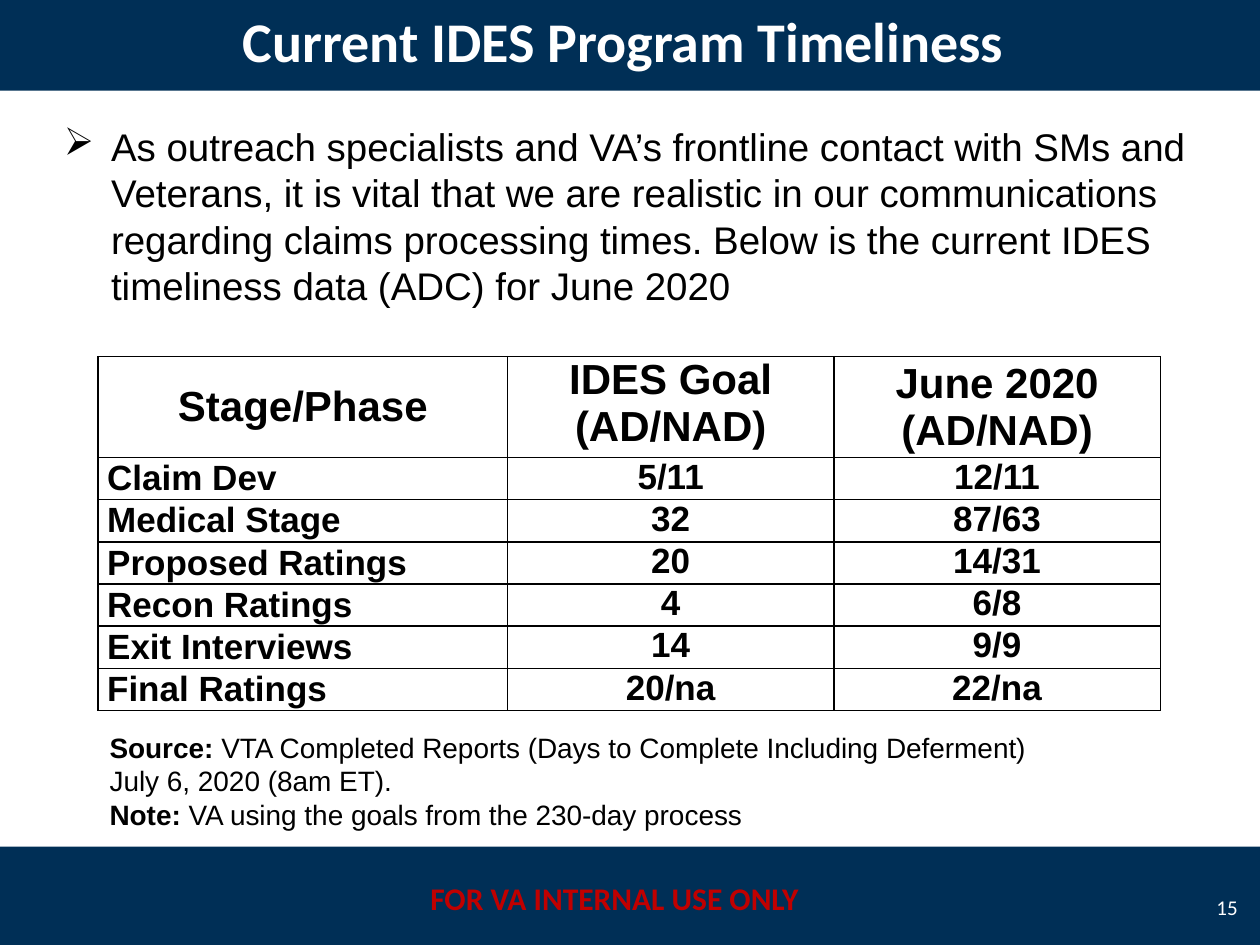
"""Build the IDES program timeliness slide."""
import pptx
import pptx.dml.color
import pptx.enum.shapes
import pptx.enum.text
import pptx.oxml
import pptx.oxml.ns
import pptx.util
from lxml import etree

Cm, Pt = pptx.util.Cm, pptx.util.Pt
RGB = pptx.dml.color.RGBColor
ALIGN = pptx.enum.text.PP_ALIGN
MID = pptx.enum.text.MSO_ANCHOR.MIDDLE
TOP = pptx.enum.text.MSO_ANCHOR.TOP
NAVY = RGB(0x00, 0x2F, 0x56)
RED = RGB(0xC0, 0x00, 0x00)
WHITE = RGB(0xFF, 0xFF, 0xFF)
BLACK = RGB(0x00, 0x00, 0x00)
A = pptx.oxml.ns.nsdecls("a")


def style(para, size, face="Arial", color=BLACK, bold=None, align=ALIGN.LEFT):
    para.alignment = align
    font = para.font
    font.size, font.name, font.bold = Pt(size), face, bold
    font.color.rgb = color


def add_box(left, top, width, height):
    box = slide.shapes.add_textbox(Cm(left), Cm(top), Cm(width), Cm(height))
    box.text_frame.word_wrap = True
    return box.text_frame


deck = pptx.Presentation()
deck.slide_width, deck.slide_height = Cm(25.4), Cm(19.05)
slide = deck.slides.add_slide(deck.slide_layouts[5])

for top in (17.07, -0.2):
    bar = slide.shapes.add_shape(
        pptx.enum.shapes.MSO_SHAPE.RECTANGLE, 0, Cm(top), Cm(25.4), Cm(2.03))
    bar.shadow.inherit = False
    bar.fill.solid()
    bar.fill.fore_color.rgb = NAVY
    bar.line.fill.background()

title = slide.shapes.title
slide.shapes._spTree.append(title._element)
title.left, title.top, title.width, title.height = 0, Cm(-0.2), Cm(25.4), Cm(2.03)
title.text_frame.text = "Current IDES Program Timeliness "
title.text_frame.vertical_anchor = MID
style(title.text_frame.paragraphs[0], 32, "Calibri", WHITE, True, ALIGN.CENTER)

foot = add_box(8.26, 17.6, 8.26, 1.02)
foot.text = "FOR VA INTERNAL USE ONLY"
style(foot.paragraphs[0], 18, "Calibri", RED, True, ALIGN.CENTER)

page = add_box(24.13, 17.78, 1.07, 1.02)
page.text = "15"
page.vertical_anchor = MID
style(page.paragraphs[0], 12, "Calibri", WHITE, align=ALIGN.RIGHT)

intro = add_box(1.04, 2.36, 23.29, 4.01)
intro.text = (
    "As outreach specialists and VA’s frontline contact with SMs and Veterans, "
    "it is vital that we are realistic in our communications regarding claims "
    "processing times. Below is the current IDES timeliness data (ADC) for June 2020")
para = intro.paragraphs[0]
props = para._p.get_or_add_pPr()
props.set("marL", str(Cm(0.95)))
props.set("indent", str(Cm(-0.95)))
etree.SubElement(props, pptx.oxml.ns.qn("a:buChar")).set("char", "➢")
style(para, 22)

notes = add_box(1.96, 14.6, 19.89, 2.31)
lines = [
    ("Source:", " VTA Completed Reports (Days to Complete Including Deferment) "
     "July 6, 2020 (8am ET)."),
    ("Note:", " VA using the goals from the 230-day process"),
]
for i, (label, text) in enumerate(lines):
    para = notes.add_paragraph() if i else notes.paragraphs[0]
    style(para, 16)
    run = para.add_run()
    run.text = label
    run.font.bold = True
    para.add_run().text = text

rows = [
    ("Stage/Phase", "IDES Goal (AD/NAD)", "June 2020 (AD/NAD)"),
    ("Claim Dev", "5/11", "12/11"),
    ("Medical Stage", "32", "87/63"),
    ("Proposed Ratings", "20", "14/31"),
    ("Recon Ratings", "4", "6/8"),
    ("Exit Interviews", "14", "9/9"),
    ("Final Ratings", "20/na", "22/na"),
]
table = slide.shapes.add_table(
    len(rows), 3, Cm(1.98), Cm(7.19), Cm(21.41), Cm(7.12)).table
table.first_row = table.horz_banding = False
for col, width in zip(table.columns, (8.25, 6.58, 6.58)):
    col.width = Cm(width)
for r, row in enumerate(rows):
    table.rows[r].height = Cm(0.85 if r else 2.03)
    for c, text in enumerate(row):
        cell = table.cell(r, c)
        cell.text = text
        cell.margin_left = cell.margin_right = Cm(0.18)
        cell.margin_top = cell.margin_bottom = 0
        cell.vertical_anchor = MID if c == 0 or (r, c) == (0, 2) else TOP
        style(cell.text_frame.paragraphs[0], 20 if r else 24, bold=True,
              align=ALIGN.LEFT if r and c == 0 else ALIGN.CENTER)
        props = cell._tc.get_or_add_tcPr()
        for side in ("lnL", "lnR", "lnT", "lnB"):
            props.append(pptx.oxml.parse_xml(
                f'<a:{side} {A} w="12700"><a:solidFill><a:srgbClr val="{BLACK}"/>'
                f'</a:solidFill></a:{side}>'))
        cell.fill.background()

deck.save("out.pptx")
